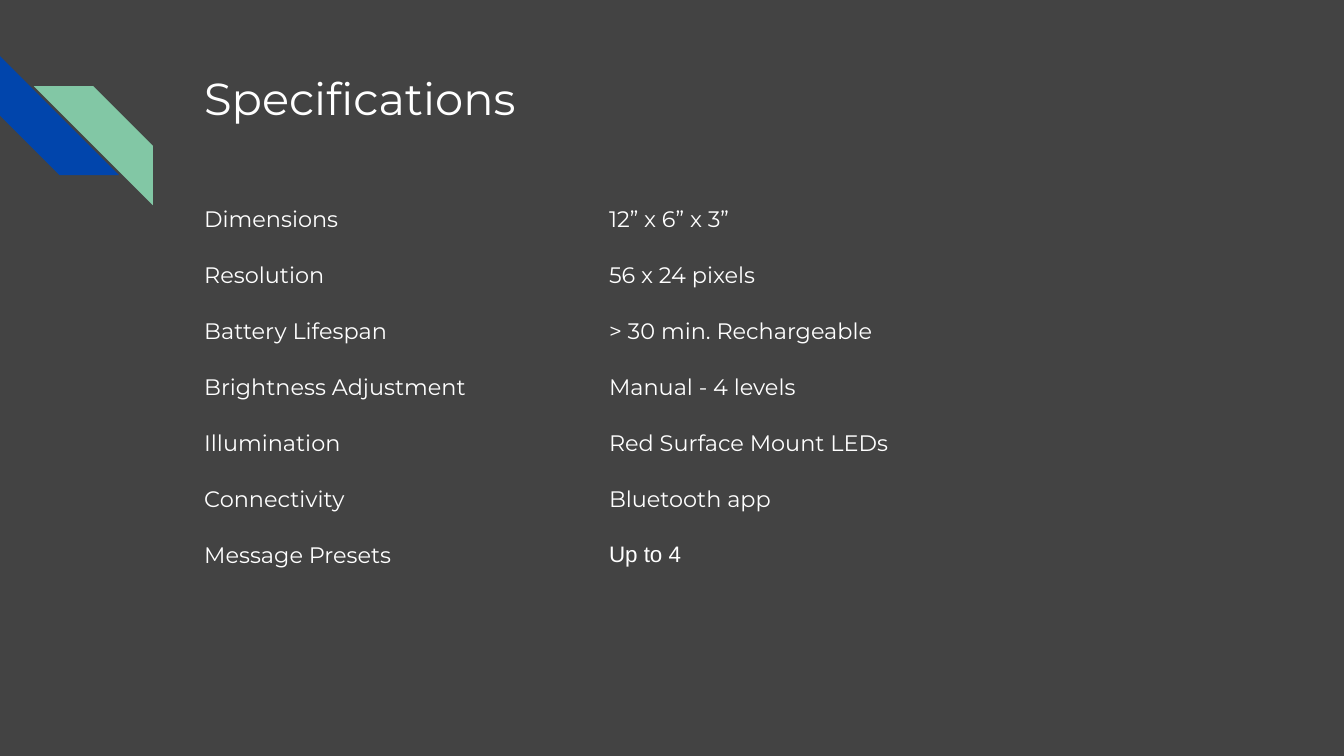
import pptx
import pptx.util
import pptx.dml.color
import pptx.enum.shapes
import pptx.enum.text

Cm = pptx.util.Cm

# Content
TITLE = "Specifications"
SPECIFICATIONS = [
    ("Dimensions", "12” x 6” x 3”"),
    ("Resolution", "56 x 24 pixels"),
    ("Battery Lifespan", "> 30 min. Rechargeable"),
    ("Brightness Adjustment", "Manual - 4 levels"),
    ("Illumination", "Red Surface Mount LEDs"),
    ("Connectivity", "Bluetooth app"),
    ("Message Presets", "Up to 4"),
]
FONT_EXCEPTIONS = {"Up to 4": "Arial"}

# Look and layout, lengths in centimetres
COLORS = {"background": "434343", "text": "FFFFFF", "blue": "0145AC", "green": "82C7A5"}
STRIPES = [  # left, top, rotation, colour
    (0, 1.06, 270, "blue"),
    (0.64, 1.63, 90, "green"),
]
STRIPE_SIZE = 2.25
LEFT = 3.61
COLUMN_WIDTHS = [7.65, 12.47]
ROW_HEIGHT = 1.06
INSETS = {f"margin_{side}": Cm(0.25) for side in ("left", "right", "top", "bottom")}
NO_GRID_STYLE = "{2D5ABB26-0587-4C30-8999-92F81FD0307C}"


def color(name):
    return pptx.dml.color.RGBColor.from_string(COLORS[name])


def set_attributes(target, values):
    for name, value in values.items():
        setattr(target, name, value)


def write(paragraph, text, size):
    run = paragraph.add_run()
    run.text = text
    font_name = FONT_EXCEPTIONS.get(text, "Montserrat")
    set_attributes(run.font, {"name": font_name, "size": pptx.util.Pt(size)})
    run.font.color.rgb = color("text")


presentation = pptx.Presentation()
set_attributes(presentation, {"slide_width": Cm(25.4), "slide_height": Cm(14.29)})
slide = presentation.slides.add_slide(presentation.slide_layouts[6])
slide.background.fill.solid()
slide.background.fill.fore_color.rgb = color("background")

# Corner stripes
for left, top, rotation, fill in STRIPES:
    stripe = slide.shapes.add_shape(
        pptx.enum.shapes.MSO_SHAPE.DIAGONAL_STRIPE,
        Cm(left), Cm(top), Cm(STRIPE_SIZE), Cm(STRIPE_SIZE))
    stripe.rotation = rotation
    stripe.shadow.inherit = False
    stripe.fill.solid()
    stripe.fill.fore_color.rgb = color(fill)
    stripe.line.fill.background()

# Title
title = slide.shapes.add_textbox(Cm(LEFT), Cm(1.09), Cm(19.56), Cm(2.54))
set_attributes(title.text_frame, INSETS | {
    "word_wrap": True, "vertical_anchor": pptx.enum.text.MSO_ANCHOR.TOP})
write(title.text_frame.paragraphs[0], TITLE, 24)

# Specification table
table = slide.shapes.add_table(
    len(SPECIFICATIONS), len(COLUMN_WIDTHS), Cm(LEFT), Cm(3.63),
    Cm(sum(COLUMN_WIDTHS)), Cm(ROW_HEIGHT * len(SPECIFICATIONS))).table
set_attributes(table, {"first_row": False, "horz_banding": False})
table._tbl.tblPr[0].text = NO_GRID_STYLE
for column, width in zip(table.columns, COLUMN_WIDTHS):
    column.width = Cm(width)
for row, texts in zip(table.rows, SPECIFICATIONS):
    row.height = Cm(ROW_HEIGHT)
    for cell, text in zip(row.cells, texts):
        set_attributes(cell, INSETS)
        cell.fill.background()
        write(cell.text_frame.paragraphs[0], text, 12)

presentation.save("out.pptx")
